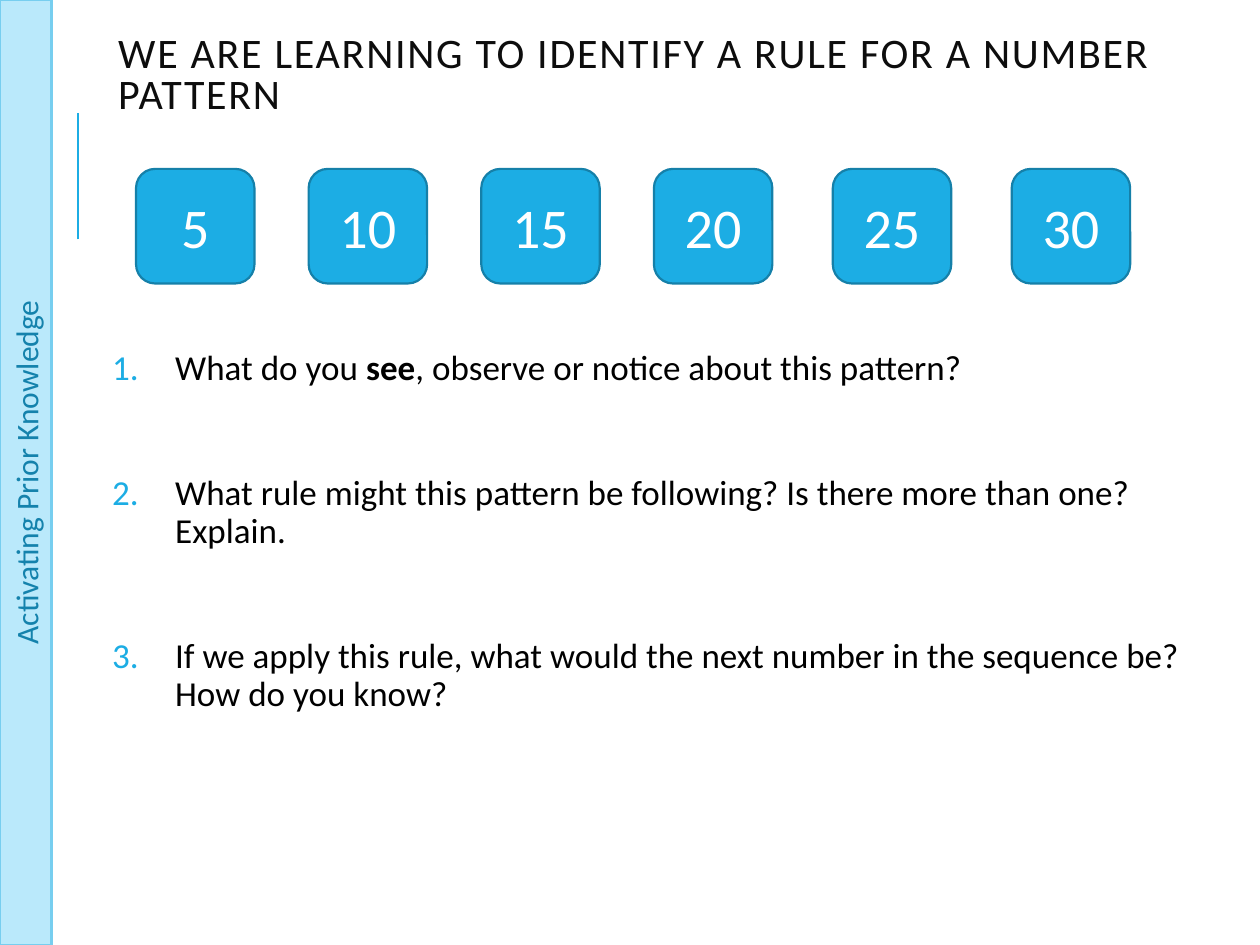
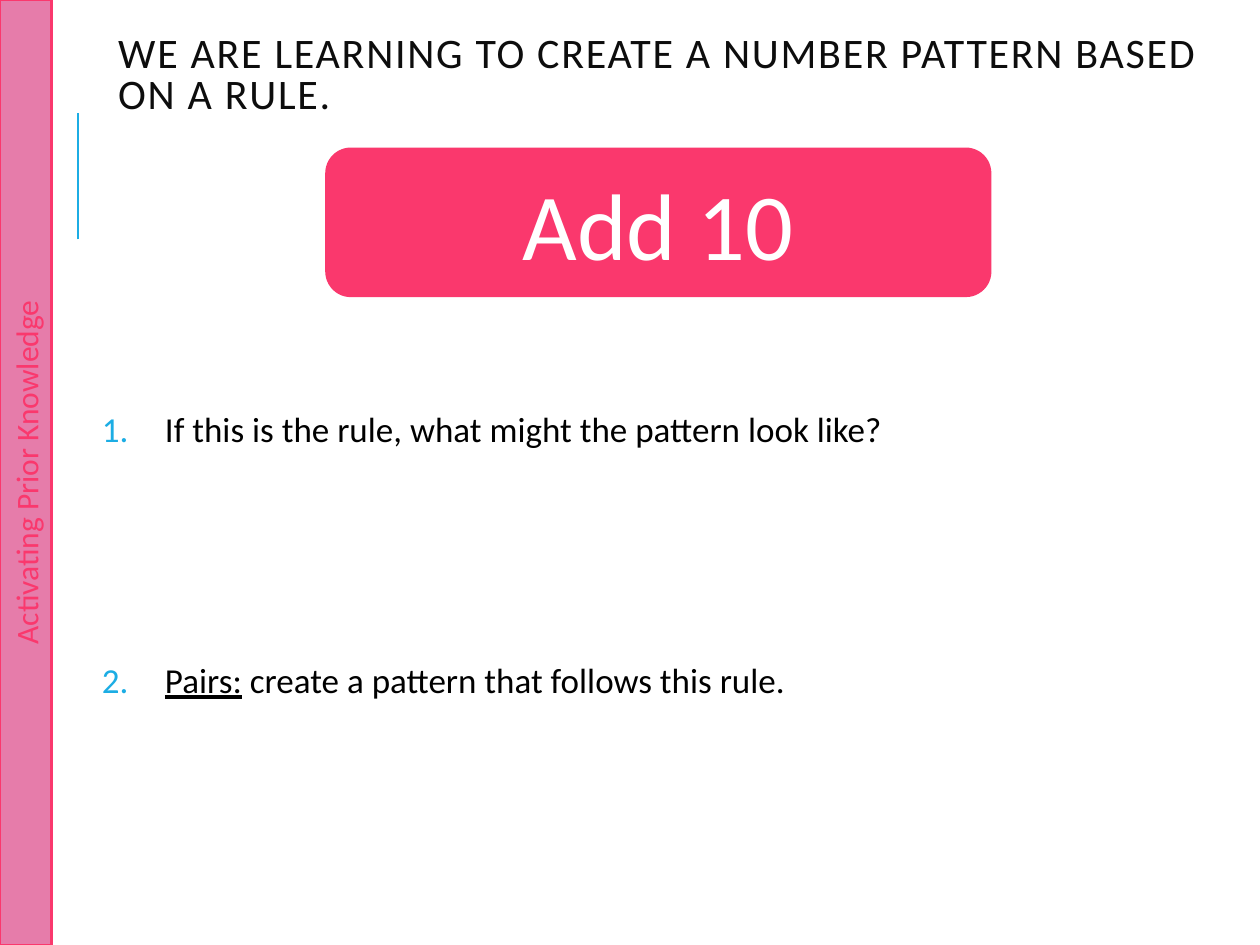
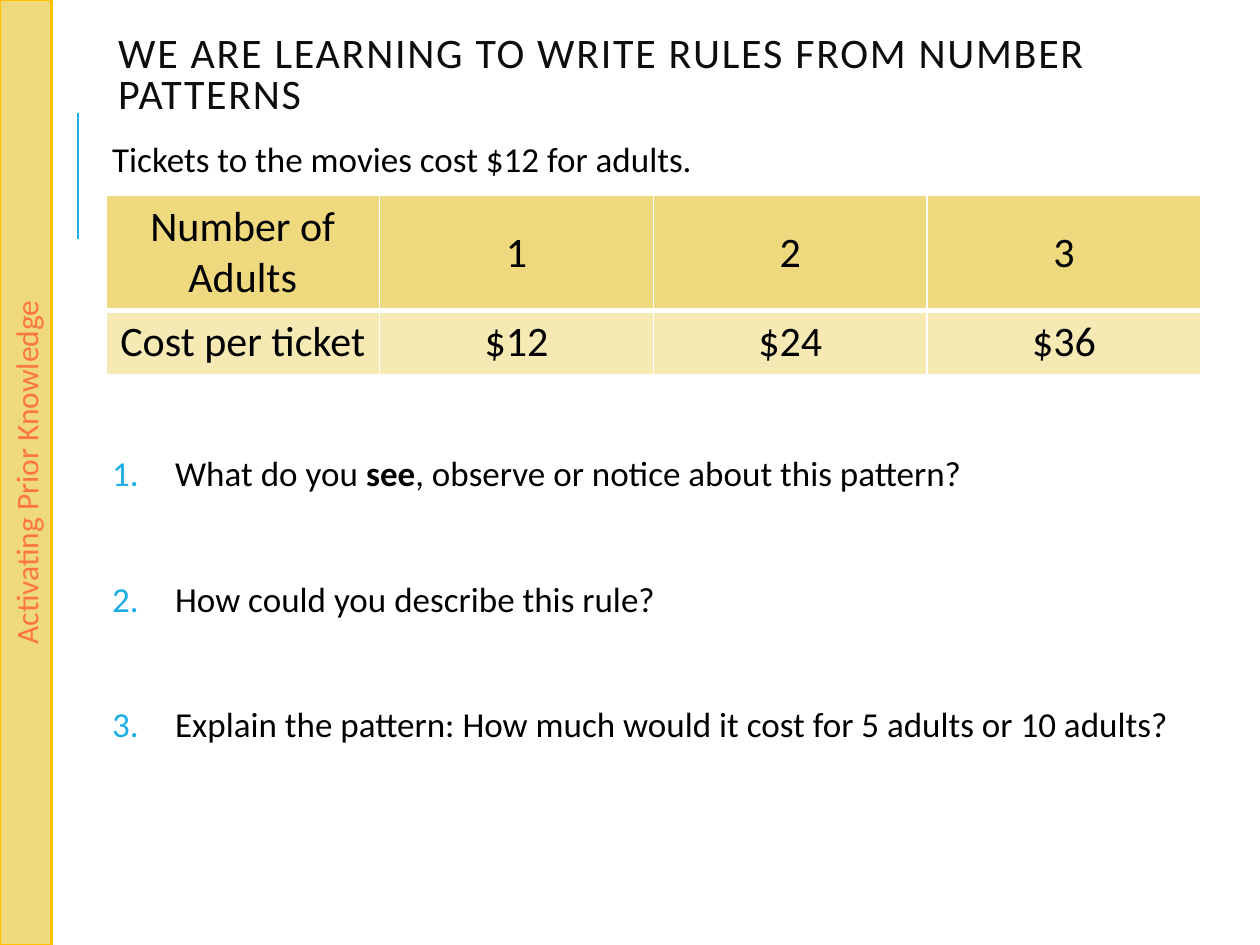
from itertools import accumulate

from lxml import etree
from pptx import Presentation
from pptx.dml.color import RGBColor
from pptx.enum import shapes, text
from pptx.oxml import ns
from pptx.util import Pt

FONT = "Calibri"
WHITE = RGBColor(0xFF, 0xFF, 0xFF)
BLACK = RGBColor(0, 0, 0)
TITLE_INK = RGBColor(0x0D, 0x0D, 0x0D)
BLUE = RGBColor(0x1C, 0xAD, 0xE4)
BLUE_EDGE = RGBColor(0x15, 0x80, 0xA9)
BLUE_INK = RGBColor(0x14, 0x82, 0xAC)
BLUE_PALE = RGBColor(0xBA, 0xE9, 0xFB)
BLUE_MID = RGBColor(0x77, 0xCE, 0xEF)
PINK = RGBColor(0xFA, 0x38, 0x6D)
PINK_SOFT = RGBColor(0xE6, 0x7C, 0xAA)
GOLD = RGBColor(0xFF, 0xC0, 0x00)
SAND = RGBColor(0xEF, 0xD9, 0x7E)
SAND_PALE = RGBColor(0xF6, 0xE9, 0xB4)
ORANGE = RGBColor(0xFD, 0x76, 0x3F)

# Content: a paragraph is (numbered, lines of space above, [(words, style)])
BAND_LABEL = "Activating Prior Knowledge"
NOTICE = [("What do you ", ""), ("see", "bold"),
          (", observe or notice about this pattern?", "")]
LESSONS = [
    {"title": "WE ARE LEARNING TO IDENTIFY A RULE FOR A NUMBER PATTERN",
     "band": (BLUE_PALE, BLUE_MID, BLUE_INK),
     "area": (60.48, 196.56, 637.2, 231.84),
     "body": [
         (True, 0, NOTICE),
         (True, 1, [("What rule might this pattern be following? "
                     "Is there more than one? Explain.", "")]),
         (True, 1, [("If we apply this rule, what would the next number "
                     "in the sequence be? How do you know?", "")])]},
    {"title": "WE ARE LEARNING TO CREATE A NUMBER PATTERN BASED ON A RULE.",
     "band": (PINK_SOFT, PINK, PINK),
     "area": (54.72, 231.84, 631.44, 291.6),
     "body": [
         (True, 0, [("If this is the rule, what might the pattern look like?", "")]),
         (True, 3, [("Pairs:", "underline"),
                    (" create a pattern that follows this rule.", "")])]},
    {"title": "WE ARE LEARNING TO WRITE RULES FROM NUMBER PATTERNS",
     "band": (SAND, GOLD, ORANGE),
     "area": (60.48, 77.76, 631.44, 424.8),
     "body": [
         (False, 0, [("Tickets to the movies cost $12 for adults.", "")]),
         (True, 4, NOTICE),
         (True, 1, [("How could you describe this rule?", "")]),
         (True, 1, [("Explain the pattern: How much would it cost "
                     "for 5 adults or 10 adults?", "")])]},
]
SEQUENCE = ["5", "10", "15", "20", "25", "30"]
SEQUENCE_LEFTS = accumulate([77.76] + [98.64] * 3 + [102.24] * 2)
RULE = "Add 10"
COSTS = [["Number of Adults", "1", "2", "3"],
         ["Cost per ticket", "$12", "$24", "$36"]]
COST_FILLS = [SAND, SAND_PALE]
COST_HEIGHTS = [65.8, 36.5]
BODY_LINE = 36  # one line of body text with its spacing


def points(*lengths):
    return [Pt(length) for length in lengths]


def add_span(para, words, size, color, style=""):
    span = para.add_run()
    span.text = words
    span.font.name, span.font.size = FONT, Pt(size)
    span.font.color.rgb = color
    if style == "bold":
        span.font.bold = True
    elif style == "underline":
        span.font.underline = True
    return span


def add_panel(page, kind, area, fill, edge, words, size, color):
    panel = page.shapes.add_shape(kind, *points(*area))
    panel.shadow.inherit = False
    panel.fill.solid()
    panel.fill.fore_color.rgb = fill
    panel.line.color.rgb = edge
    panel.line.width = Pt(1.25)
    para = panel.text_frame.paragraphs[0]
    para.alignment = text.PP_ALIGN.CENTER
    add_span(para, words, size, color)
    return panel


def add_accent(page):
    accent = page.shapes.add_connector(
        shapes.MSO_CONNECTOR.STRAIGHT, *points(44.64, 136.8, 44.64, 64.8))
    accent.line.color.rgb = BLUE
    accent.line.width = Pt(1.5)
    etree.SubElement(accent._element.spPr, ns.qn("a:effectLst"))


def add_title(page, words):
    frame = page.shapes.add_textbox(*points(60.48, 28.8, 631.44, 56.88)).text_frame
    frame.word_wrap = True
    frame.vertical_anchor = text.MSO_ANCHOR.MIDDLE
    frame.margin_bottom = Pt(30)  # lifts the two lines above the centre
    para = frame.paragraphs[0]
    para.line_spacing = 0.8
    span = add_span(para, words, 24, TITLE_INK)
    span.font._element.set("spc", "100")


def add_number(para):
    props = para._p.get_or_add_pPr()
    props.set("marL", str(Pt(36)))
    props.set("indent", str(-Pt(36)))
    color = etree.SubElement(props, ns.qn("a:buClr"))
    etree.SubElement(color, ns.qn("a:srgbClr"), val=str(BLUE))
    etree.SubElement(props, ns.qn("a:buFont"), typeface="+mj-lt")
    etree.SubElement(props, ns.qn("a:buAutoNum"), type="arabicPeriod")


def add_body(page, area, paragraphs):
    frame = page.shapes.add_textbox(*points(*area)).text_frame
    frame.word_wrap = True
    frame.margin_left = frame.margin_right = Pt(3.6)
    frame.margin_top = frame.margin_bottom = Pt(3.6)
    for index, (numbered, lines_above, spans) in enumerate(paragraphs):
        para = frame.add_paragraph() if index else frame.paragraphs[0]
        para.line_spacing = 0.9
        para.space_before = Pt(12 + BODY_LINE * lines_above)
        para.space_after = Pt(2)
        if numbered:
            add_number(para)
        for words, style in spans:
            add_span(para, words, 20, BLACK, style)


def add_border(cell, side, width):
    border = etree.SubElement(cell._tc.get_or_add_tcPr(),
                              ns.qn("a:ln" + side), w=str(Pt(width)))
    fill = etree.SubElement(border, ns.qn("a:solidFill"))
    etree.SubElement(fill, ns.qn("a:srgbClr"), val=str(WHITE))


def add_costs(page):
    table = page.shapes.add_table(
        len(COSTS), len(COSTS[0]),
        *points(60.48, 111.6, 625.68, sum(COST_HEIGHTS))).table
    for row, height in enumerate(COST_HEIGHTS):
        table.rows[row].height = Pt(height)
        for column, words in enumerate(COSTS[row]):
            cell = table.cell(row, column)
            inner_side = "B" if row == 0 else "T"
            for side in "LRTB":
                add_border(cell, side, 3 if side == inner_side else 1)
            cell.fill.solid()
            cell.fill.fore_color.rgb = COST_FILLS[row]
            cell.vertical_anchor = text.MSO_ANCHOR.MIDDLE
            para = cell.text_frame.paragraphs[0]
            para.alignment = text.PP_ALIGN.CENTER
            add_span(para, words, 24, BLACK)


def add_lesson(deck, lesson):
    page = deck.slides.add_slide(deck.slide_layouts[6])
    add_accent(page)
    add_title(page, lesson["title"])
    add_body(page, lesson["area"], lesson["body"])
    fill, edge, ink = lesson["band"]
    band = add_panel(page, shapes.MSO_SHAPE.RECTANGLE, (0, 0, 29.52, 540),
                     fill, edge, BAND_LABEL, 18, ink)
    band.text_frame._txBody.bodyPr.set("vert", "vert270")
    return page


def main():
    deck = Presentation()
    deck.slide_width, deck.slide_height = points(720, 540)
    pattern_page, rule_page, cost_page = [add_lesson(deck, lesson) for lesson in LESSONS]

    # Number tiles
    rounded = shapes.MSO_SHAPE.ROUNDED_RECTANGLE
    for left, number in zip(SEQUENCE_LEFTS, SEQUENCE):
        add_panel(pattern_page, rounded, (left, 96.48, 67.68, 65.52),
                  BLUE, BLUE_EDGE, number, 32, WHITE)

    # Rule card
    add_panel(rule_page, rounded, (186.48, 84.96, 379.44, 84.24),
              PINK, PINK, RULE, 54, WHITE)

    # Ticket costs
    add_costs(cost_page)
    deck.save("out.pptx")


if __name__ == "__main__":
    main()
